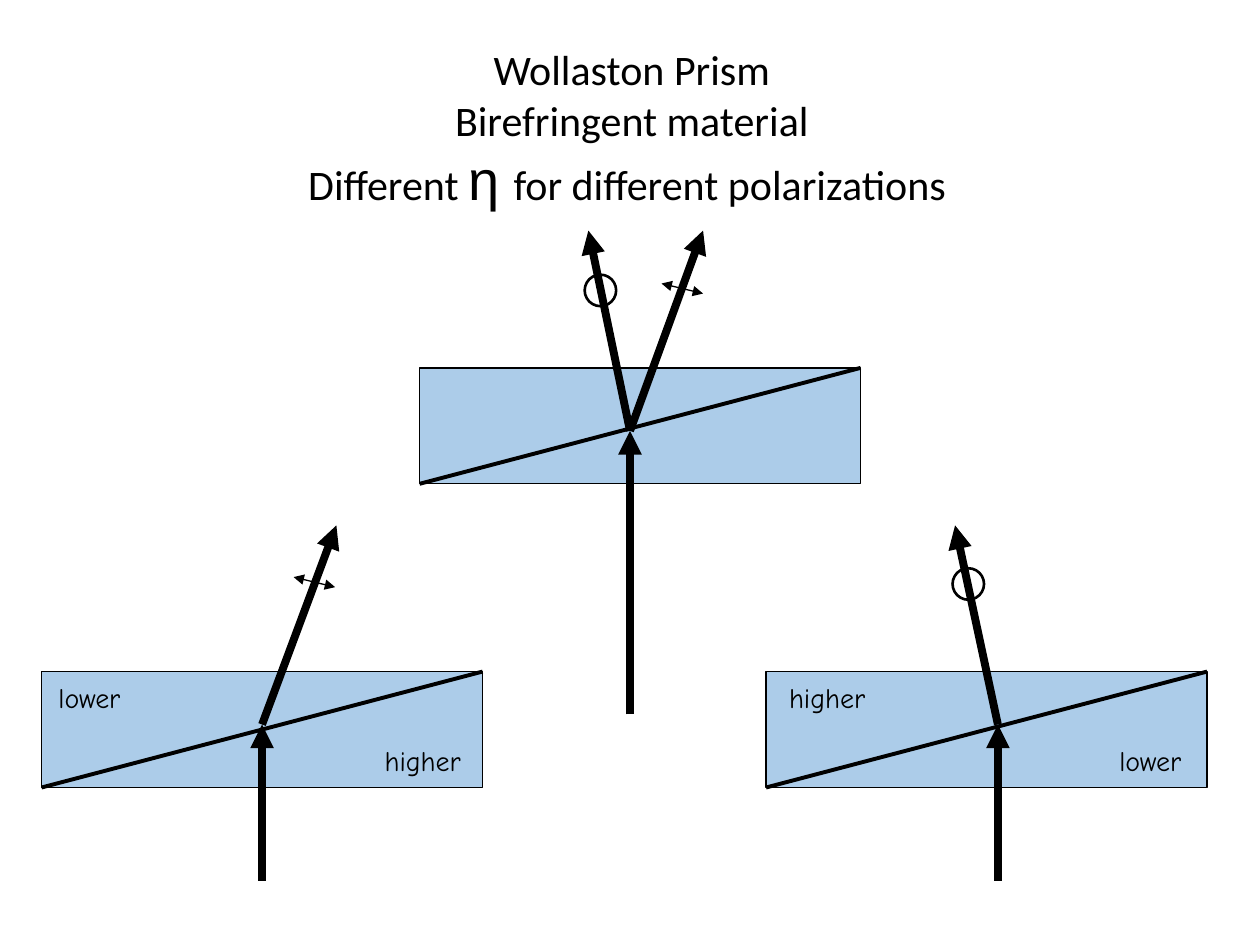
from lxml import etree
from pptx import Presentation
from pptx.dml.color import RGBColor
from pptx.enum import shapes, text
from pptx.oxml.ns import qn
from pptx.util import Inches, Pt


def color(target, value):
    target.rgb = RGBColor.from_string(value)


def draw_line(start, end, width, **arrowheads):
    line = slide.shapes.add_connector(
        shapes.MSO_CONNECTOR.STRAIGHT, *map(Inches, (*start, *end)))
    color(line.line.color, "000000")
    line.line.width = Pt(width)
    outline = line.line._get_or_add_ln()
    for tag, kind in arrowheads.items():
        etree.SubElement(outline, qn(f"a:{tag}"), type=kind)
    etree.SubElement(line._element.spPr, qn("a:effectLst"))


presentation = Presentation()
presentation.slide_width = Inches(10)
presentation.slide_height = Inches(7.5)
slide = presentation.slides.add_slide(presentation.slide_layouts[5])

heading = slide.shapes.title
heading.left, heading.top = Inches(2.31), Inches(0.29)
heading.width, heading.height = Inches(5.41), Inches(1.45)
frame = heading.text_frame
frame.auto_size = text.MSO_AUTO_SIZE.NONE
frame.word_wrap = False
frame.vertical_anchor = text.MSO_ANCHOR.MIDDLE
heading_lines = [
    [("Wollaston Prism", 24, "Calibri")],
    [("Birefringent material", 24, "Calibri")],
    [("Different ", 24, "Calibri"), ("η", 32, "Arial"), (" ", 24, "Comic Neue"),
     ("for different polarizations ", 24, "Calibri")],
]
for index, parts in enumerate(heading_lines):
    paragraph = frame.add_paragraph() if index else frame.paragraphs[0]
    paragraph.alignment = text.PP_ALIGN.CENTER
    for words, size, font in parts:
        run = paragraph.add_run()
        run.text = words
        run.font.size = Pt(size)
        run.font.name = font
        color(run.font.color, "000000")

prism_width, prism_height = 3.5, 0.92
for left, top in [(3.33, 2.92), (0.33, 5.33), (6.08, 5.33)]:
    prism = slide.shapes.add_shape(
        shapes.MSO_SHAPE.RECTANGLE, Inches(left), Inches(top),
        Inches(prism_width), Inches(prism_height))
    prism.shadow.inherit = False
    prism.fill.solid()
    color(prism.fill.fore_color, "5B9BD5")
    fill_color = prism._element.spPr.find(f".//{qn('a:srgbClr')}")
    etree.SubElement(fill_color, qn("a:alpha"), val="50000")
    color(prism.line.color, "000000")
    prism.line.width = Pt(0.75)
    draw_line((left, top + prism_height), (left + prism_width, top), 2.25)

index_labels = [
    ("lower", 0.33, 5.33, 0.76), ("higher", 2.92, 5.83, 0.87),
    ("higher", 6.13, 5.33, 0.87), ("lower", 8.75, 5.83, 0.76),
]
for words, left, top, width in index_labels:
    label = slide.shapes.add_textbox(
        Inches(left), Inches(top), Inches(width), Inches(0.41))
    label.text_frame.word_wrap = False
    label.text_frame.vertical_anchor = text.MSO_ANCHOR.MIDDLE
    paragraph = label.text_frame.paragraphs[0]
    paragraph.text = words
    paragraph.alignment = text.PP_ALIGN.CENTER
    paragraph.font.size = Pt(16)
    paragraph.font.name = "Comic Neue"
    color(paragraph.font.color, "000000")

rays = [
    ((5, 5.67), (5, 3.42)), ((5, 3.42), (4.67, 1.83)), ((5, 3.42), (5.58, 1.83)),
    ((2.08, 6.99), (2.08, 5.75)), ((2.08, 5.75), (2.67, 4.17)),
    ((7.92, 6.99), (7.92, 5.75)), ((7.92, 5.75), (7.58, 4.17)),
]
for start, end in rays:
    draw_line(start, end, 4.5, tailEnd="triangle")

for left, top in [(5.25, 2.25), (2.33, 4.58)]:
    draw_line((left, top), (left + 0.33, top + 0.08), 0.75,
              headEnd="triangle", tailEnd="triangle")

for left, top in [(4.64, 2.18), (7.56, 4.51)]:
    polarization = slide.shapes.add_shape(
        shapes.MSO_SHAPE.OVAL, Inches(left), Inches(top), Inches(0.25), Inches(0.25))
    polarization.shadow.inherit = False
    polarization.fill.background()
    color(polarization.line.color, "000000")
    polarization.line.width = Pt(1.5)

presentation.save("out.pptx")
